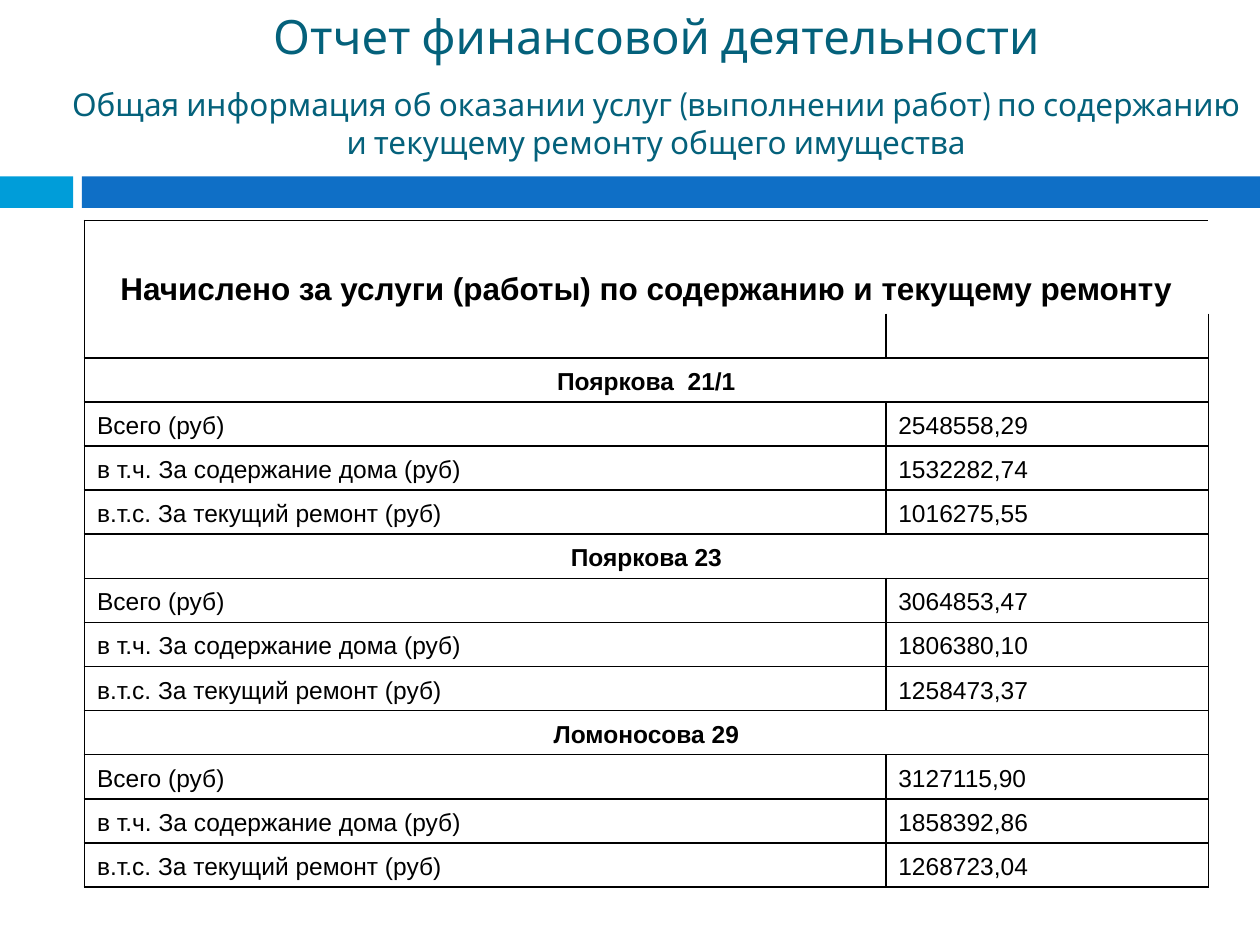
"""Build the slide with the financial report on building maintenance charges."""
import pptx
import pptx.dml.color
import pptx.enum.shapes
import pptx.enum.text
import pptx.oxml.ns
import pptx.util
from lxml import etree
from pptx.util import Inches

RGBColor = pptx.dml.color.RGBColor
ALIGN = pptx.enum.text.PP_ALIGN
ANCHOR = pptx.enum.text.MSO_ANCHOR
TEAL = RGBColor(0x04, 0x61, 0x7B)
CYAN = RGBColor(0x00, 0x9D, 0xD9)
BLUE = RGBColor(0x0F, 0x6F, 0xC6)
BLACK = RGBColor(0x00, 0x00, 0x00)

TITLE = "Отчет финансовой деятельности"
SUBTITLE = ("Общая информация об оказании услуг (выполнении работ) "
            "по содержанию и текущему ремонту общего имущества")
TABLE_HEADING = "Начислено за услуги (работы) по содержанию и текущему ремонту"
LABELS = ("Всего (руб)", "в т.ч. За содержание дома (руб)", "в.т.с. За текущий ремонт (руб)")
HOUSES = {
    "Пояркова  21/1": ("2548558,29", "1532282,74", "1016275,55"),
    "Пояркова 23": ("3064853,47", "1806380,10", "1258473,37"),
    "Ломоносова 29": ("3127115,90", "1858392,86", "1268723,04"),
}
BANDS = ((0, 0.58, CYAN), (0.65, 9.35, BLUE))
COLUMN_WIDTHS = (6.36, 2.56)
HEADING_HEIGHT, ROW_HEIGHT = 0.74, 0.35


def write(para, text, size=14, font="Arial", color=BLACK, bold=False, align=ALIGN.LEFT):
    para.alignment = align
    span = para.add_run()
    span.text = text
    span.font.size = pptx.util.Pt(size)
    span.font.name = font
    span.font.color.rgb = color
    span.font.bold = bold


def set_borders(cell, sides):
    properties = cell._tc.get_or_add_tcPr()
    for side in "LRTB":
        line = etree.SubElement(properties, pptx.oxml.ns.qn(f"a:ln{side}"), w="12700")
        if side in sides:
            fill = etree.SubElement(line, pptx.oxml.ns.qn("a:solidFill"))
            etree.SubElement(fill, pptx.oxml.ns.qn("a:srgbClr"), val=str(BLACK))
        else:
            etree.SubElement(line, pptx.oxml.ns.qn("a:noFill"))


def add_bands(page):
    for left, width, color in BANDS:
        band = page.shapes.add_shape(pptx.enum.shapes.MSO_SHAPE.RECTANGLE,
                                     Inches(left), Inches(1.4), Inches(width), Inches(0.25))
        band.shadow.inherit = False
        band.fill.solid()
        band.fill.fore_color.rgb = color
        band.line.fill.background()


def add_title(page):
    box = page.shapes.add_textbox(Inches(0.42), Inches(0.33), Inches(9.58), Inches(0.67))
    frame = box.text_frame
    frame.word_wrap = True
    frame.vertical_anchor = ANCHOR.MIDDLE
    write(frame.paragraphs[0], TITLE, size=27, font="Cabin", color=TEAL, align=ALIGN.CENTER)
    para = frame.add_paragraph()
    para.space_before = pptx.util.Pt(12)
    write(para, SUBTITLE, size=18, font="Cabin", color=TEAL, align=ALIGN.CENTER)


def add_charges(page):
    rows = [(TABLE_HEADING,), ("", "")]
    for house, amounts in HOUSES.items():
        rows += [(house,), *zip(LABELS, amounts)]
    height = HEADING_HEIGHT + ROW_HEIGHT * (len(rows) - 1)
    table = page.shapes.add_table(len(rows), 2, Inches(0.67), Inches(1.75),
                                  Inches(sum(COLUMN_WIDTHS)), Inches(height)).table
    table.first_row = table.horz_banding = False
    for column, width in zip(table.columns, COLUMN_WIDTHS):
        column.width = Inches(width)
    for index, texts in enumerate(rows):
        table.rows[index].height = Inches(ROW_HEIGHT if index else HEADING_HEIGHT)
        heading = len(texts) == 1
        for cell in table.rows[index].cells:
            set_borders(cell, {0: "LT", 1: "LRB"}.get(index, "LRTB"))
            cell.fill.background()
            cell.vertical_anchor = ANCHOR.BOTTOM
            cell.text_frame.paragraphs[0]._p.get_or_add_endParaRPr().set("sz", "1400")
        if heading:
            table.cell(index, 0).merge(table.cell(index, 1))
        for column, text in enumerate(texts):
            if text:
                write(table.cell(index, column).text_frame.paragraphs[0], text,
                      size=14 if index else 18, bold=heading,
                      align=ALIGN.CENTER if heading else ALIGN.LEFT)


def main():
    deck = pptx.Presentation()
    deck.slide_width, deck.slide_height = Inches(10), Inches(7.5)
    page = deck.slides.add_slide(deck.slide_layouts[6])
    add_bands(page)
    add_title(page)
    add_charges(page)
    deck.save("out.pptx")


if __name__ == "__main__":
    main()
